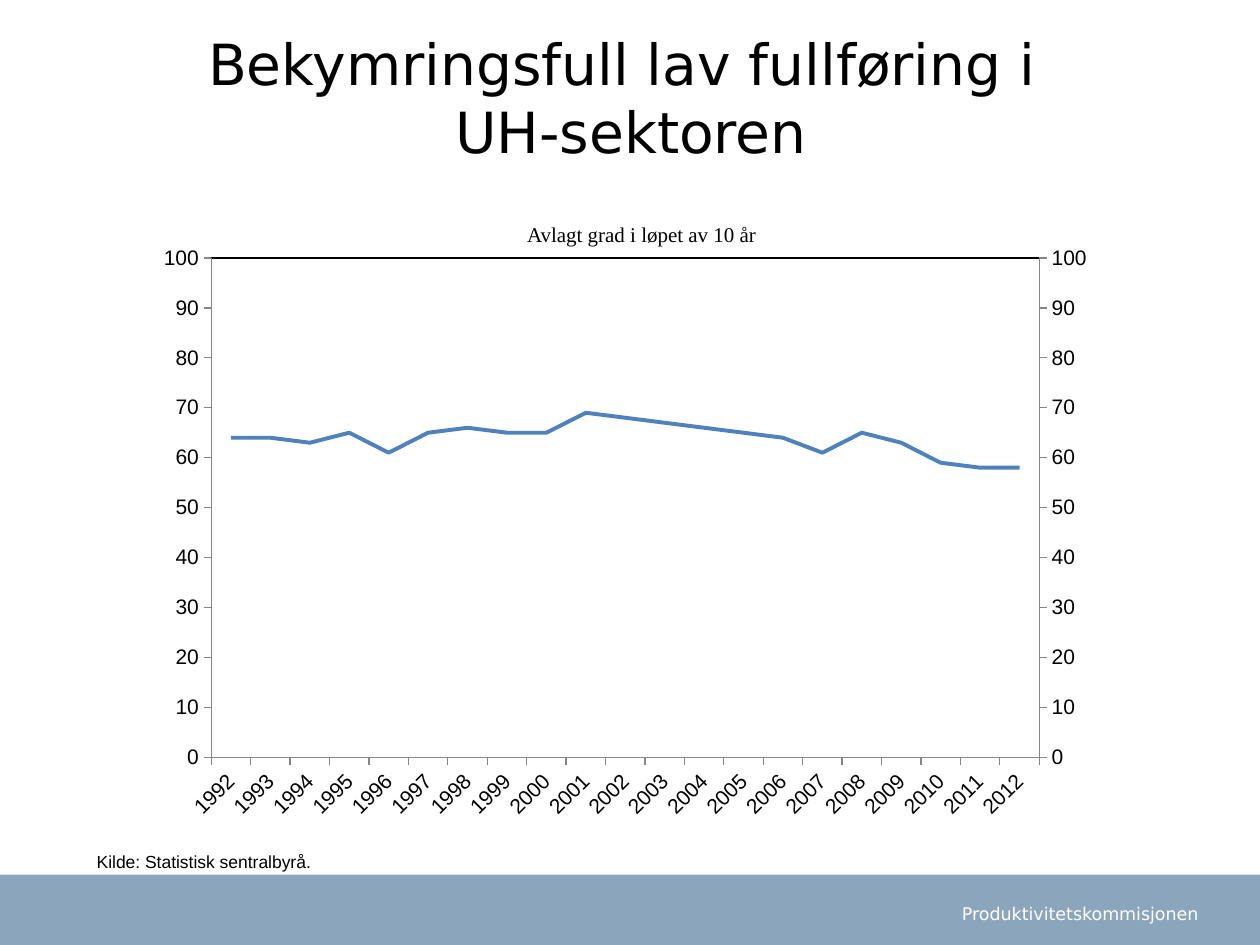
from copy import deepcopy

from lxml import etree
from pptx import Presentation
from pptx.chart.data import CategoryChartData
from pptx.dml.color import RGBColor
from pptx.enum.chart import XL_CHART_TYPE, XL_TICK_MARK
from pptx.enum.shapes import MSO_SHAPE
from pptx.enum.text import MSO_ANCHOR, PP_ALIGN
from pptx.oxml import parse_xml
from pptx.oxml.ns import nsdecls, qn
from pptx.util import Cm, Pt

LINE_CHART = XL_CHART_TYPE.LINE
TICK_OUT, TICK_NONE = XL_TICK_MARK.OUTSIDE, XL_TICK_MARK.NONE
RECTANGLE = MSO_SHAPE.RECTANGLE
TOP, MIDDLE, BOTTOM = MSO_ANCHOR.TOP, MSO_ANCHOR.MIDDLE, MSO_ANCHOR.BOTTOM
LEFT, CENTER, RIGHT = PP_ALIGN.LEFT, PP_ALIGN.CENTER, PP_ALIGN.RIGHT

BLACK = RGBColor(0x00, 0x00, 0x00)
WHITE = RGBColor(0xFF, 0xFF, 0xFF)
BAND_BLUE = RGBColor(0x8B, 0xA5, 0xBC)
LINE_BLUE = RGBColor(0x4F, 0x81, 0xBD)
AXIS_GREY = RGBColor(0x86, 0x86, 0x86)

YEARS = [str(year) for year in range(1992, 2013)]
COMPLETION = [64, 64, 63, 65, 61, 65, 66, 65, 65, 69, 68,
              67, 66, 65, 64, 61, 65, 63, 59, 58, 58]
RIGHT_SERIES = [0, 0] + [None] * (len(YEARS) - 2)
PLOT_LAYOUT = {"x": 0.07, "y": 0.04, "w": 0.86, "h": 0.84}


def add_text(slide, text, left, top, width, height, *, size, font="Arial",
             color=BLACK, align=LEFT, anchor=TOP, wrap=True, inset=True):
    box = slide.shapes.add_textbox(Cm(left), Cm(top), Cm(width), Cm(height))
    tf = box.text_frame
    tf.word_wrap = wrap
    tf.vertical_anchor = anchor
    if not inset:
        tf.margin_top = tf.margin_bottom = 0
    p = tf.paragraphs[0]
    p.text = text
    p.alignment = align
    for r in p.runs:
        r.font.name = font
        r.font.size = Pt(size)
        r.font.color.rgb = color
    return box


def add_band(slide, left, top, width, height, color):
    band = slide.shapes.add_shape(RECTANGLE, Cm(left), Cm(top), Cm(width), Cm(height))
    band.shadow.inherit = False
    band.fill.solid()
    band.fill.fore_color.rgb = color
    band.line.fill.background()


def style_axis(axis):
    axis.has_major_gridlines = False
    axis.major_tick_mark = TICK_OUT
    axis.minor_tick_mark = TICK_NONE
    axis.format.line.color.rgb = AXIS_GREY
    axis.format.line.width = Pt(0.75)
    axis.tick_labels.font.size = Pt(12)


def set_plot_area(plot_area):
    """Fix the inner plot position and give it a black frame."""
    for old in plot_area.findall(qn("c:layout")):
        plot_area.remove(old)
    values = "".join(f'<c:{k} val="{v}"/>' for k, v in PLOT_LAYOUT.items())
    plot_area.insert(0, parse_xml(
        f'<c:layout {nsdecls("c")}><c:manualLayout><c:layoutTarget val="inner"/>'
        f'<c:xMode val="edge"/><c:yMode val="edge"/>{values}'
        '</c:manualLayout></c:layout>'))
    plot_area.append(parse_xml(
        f'<c:spPr {nsdecls("c", "a")}><a:noFill/><a:ln w="9525"><a:solidFill>'
        f'<a:srgbClr val="{BLACK}"/></a:solidFill></a:ln></c:spPr>'))


def add_right_axis(plot_area):
    """Move the second series to its own line chart with an axis at the right."""
    left_chart = plot_area.find(qn("c:lineChart"))
    right_chart = deepcopy(left_chart)
    left_chart.remove(left_chart.findall(qn("c:ser"))[1])
    right_chart.remove(right_chart.find(qn("c:ser")))
    left_chart.addnext(right_chart)

    cat_axis = plot_area.find(qn("c:catAx"))
    val_axis = plot_area.find(qn("c:valAx"))
    right_cat, right_val = deepcopy(cat_axis), deepcopy(val_axis)
    val_axis.addnext(right_val)
    right_val.addnext(right_cat)

    # Give the copied pair its own ids
    ids = {cat_axis.find(qn("c:axId")).get("val"): "50010",
           val_axis.find(qn("c:axId")).get("val"): "50020"}
    for part in (right_chart, right_cat, right_val):
        for tag in ("c:axId", "c:crossAx"):
            for ref in part.findall(qn(tag)):
                ref.set("val", ids[ref.get("val")])

    right_cat.find(qn("c:delete")).set("val", "1")
    right_val.find(qn("c:axPos")).set("val", "r")
    for old in right_val.findall(qn("c:crosses")):
        right_val.remove(old)
    crosses = etree.Element(qn("c:crosses"), val="max")
    right_val.find(qn("c:crossAx")).addnext(crosses)


def add_completion_chart(slide, left, top, width, height):
    data = CategoryChartData(number_format="0")
    data.categories = YEARS
    data.add_series("Series 1", COMPLETION)
    data.add_series("Series 2", RIGHT_SERIES)
    chart = slide.shapes.add_chart(
        LINE_CHART, Cm(left), Cm(top), Cm(width), Cm(height), data).chart
    chart.has_title = False
    chart.has_legend = False
    chart.font.name = "Arial"
    chart.font.size = Pt(12)
    chart.font.color.rgb = BLACK

    # Series
    plot = chart.plots[0]
    plot.vary_by_categories = False
    for series in plot.series:
        series.smooth = False
    completion, right_series = plot.series
    completion.format.line.color.rgb = LINE_BLUE
    completion.format.line.width = Pt(2.25)
    right_series.format.line.fill.background()

    # Axes
    years, values = chart.category_axis, chart.value_axis
    for axis in (years, values):
        style_axis(axis)
    values.minimum_scale, values.maximum_scale = 0, 100
    values.major_unit = 10
    values.tick_labels.number_format = "0"
    values.tick_labels.number_format_is_linked = False

    plot_area = chart.element.find(".//" + qn("c:plotArea"))
    label_body = plot_area.find(f"{qn('c:catAx')}/{qn('c:txPr')}/{qn('a:bodyPr')}")
    label_body.set("rot", "-2700000")
    add_right_axis(plot_area)
    set_plot_area(plot_area)


def main():
    prs = Presentation()
    prs.slide_width, prs.slide_height = Cm(25.4), Cm(19.05)
    slide = prs.slides.add_slide(prs.slide_layouts[6])

    # Footer band
    add_band(slide, 0, 17.63, 25.4, 1.5, BAND_BLUE)
    add_text(slide, "Produktivitetskommisjonen", 17.91, 18.08, 6.5, 0.69, size=10,
             font="DejaVu Sans", color=WHITE, align=RIGHT, anchor=MIDDLE)

    # Title
    add_text(slide, "Bekymringsfull lav fullføring i \vUH-sektoren", 1.04, 0.74,
             23.37, 2.59, size=32.4, font="DejaVu Sans", align=CENTER,
             anchor=BOTTOM, inset=False)

    # Chart with source and heading
    add_text(slide, "Kilde: Statistisk sentralbyrå.", 1.7, 17.04, 4.88, 0.69,
             size=10, wrap=False)
    add_completion_chart(slide, 2.9, 4.72, 19.41, 11.99)
    add_text(slide, "Avlagt grad i løpet av 10 år ", 7.49, 4.34, 11, 0.76,
             size=12, font="Times New Roman", align=CENTER)

    prs.save("out.pptx")


if __name__ == "__main__":
    main()
